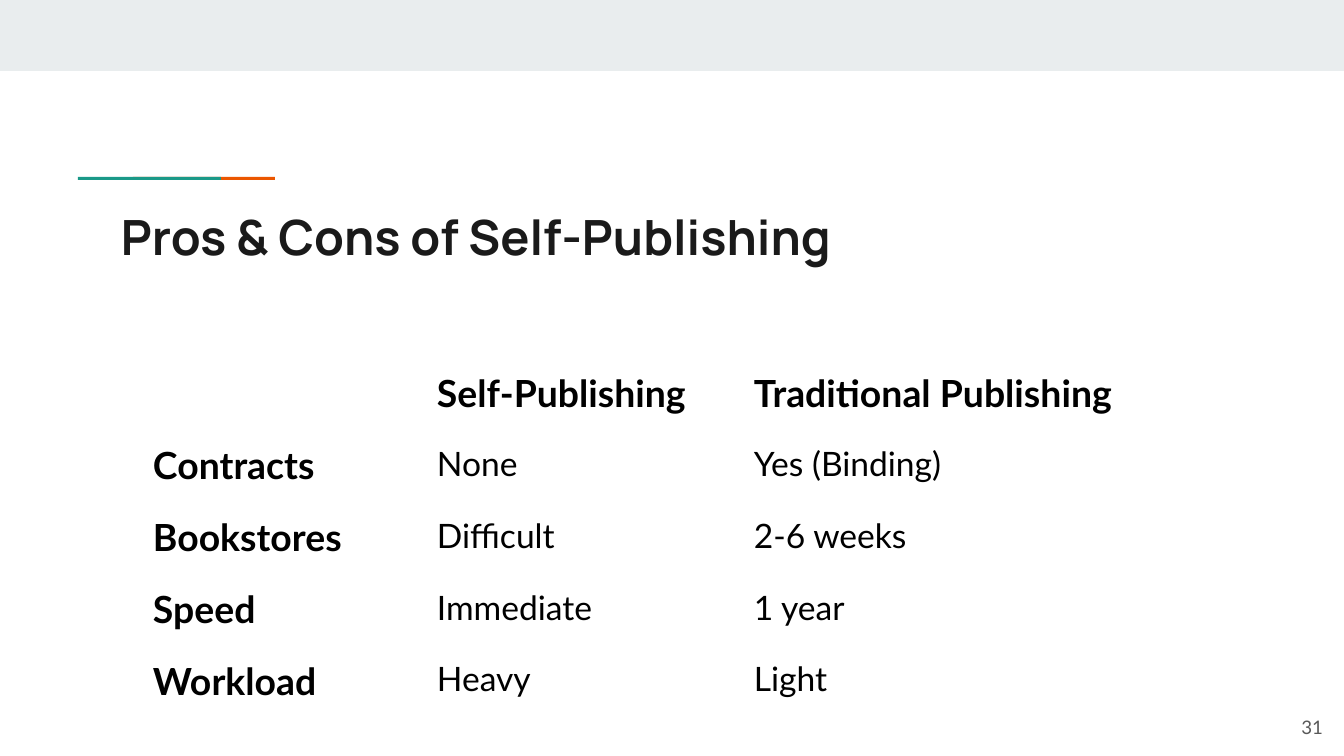
import pptx
import pptx.dml.color
import pptx.enum.shapes
import pptx.enum.text
import pptx.util

EMU_PER_PX = 914400 / 134.4
INSET = 13
ROW_HEIGHT = 72
THEME = {
    "band": "E9EDEE",
    "orange": "EB5600",
    "teal": "1A9988",
    "title": {"font": "Manrope", "size": 26, "bold": True, "color": "1A1A1A"},
    "heading": {"font": "Lato", "size": 20, "bold": True, "color": "000000"},
    "value": {"font": "Lato", "size": 18, "bold": False, "color": "000000"},
    "page_number": {"font": "Lato", "size": 10, "bold": False, "color": "595959"},
}


def px(length):
    return pptx.util.Emu(round(length * EMU_PER_PX))


def write(frame, inset_owner, words, role):
    for side in ("left", "top", "right", "bottom"):
        setattr(inset_owner, f"margin_{side}", px(INSET))
    frame.text = words
    style = THEME[role]
    for run in frame.paragraphs[0].runs:
        run.font.name = style["font"]
        run.font.size = pptx.util.Pt(style["size"])
        run.font.bold = style["bold"]
        run.font.color.rgb = pptx.dml.color.RGBColor.from_string(style["color"])


deck = pptx.Presentation()
deck.slide_width, deck.slide_height = px(1344), px(756)
slide = deck.slides.add_slide(deck.slide_layouts[6])

for color, *place in [
    ("band", 0, 0, 1344, 71),
    ("orange", 133, 177, 142, 3),
    ("teal", 78, 177, 143, 3),
]:
    bar = slide.shapes.add_shape(pptx.enum.shapes.MSO_SHAPE.RECTANGLE, *map(px, place))
    bar.shadow.inherit = False
    bar.fill.solid()
    bar.fill.fore_color.rgb = pptx.dml.color.RGBColor.from_string(THEME[color])
    bar.line.fill.background()

left_aligned = pptx.enum.text.PP_ALIGN.LEFT
right_aligned = pptx.enum.text.PP_ALIGN.RIGHT
top = pptx.enum.text.MSO_ANCHOR.TOP
middle = pptx.enum.text.MSO_ANCHOR.MIDDLE
for role, words, alignment, anchor, *place in [
    ("title", "Pros & Cons of Self-Publishing", left_aligned, top, 108, 194, 1130, 79),
    ("page_number", "31", right_aligned, middle, 1255, 698, 81, 58),
]:
    frame = slide.shapes.add_textbox(*map(px, place)).text_frame
    write(frame, frame, words, role)
    frame.word_wrap = True
    frame.vertical_anchor = anchor
    frame.paragraphs[0].alignment = alignment

publishing_routes = [
    ("", "Self-Publishing", "Traditional Publishing"),
    ("Contracts", "None", "Yes (Binding)"),
    ("Bookstores", "Difficult", "2-6 weeks"),
    ("Speed", "Immediate", "1 year"),
    ("Workload", "Heavy", "Light"),
]
column_widths = [284, 317, 464]
comparison = slide.shapes.add_table(
    len(publishing_routes), len(column_widths),
    px(140), px(358), px(sum(column_widths)), px(ROW_HEIGHT * len(publishing_routes)),
).table
comparison.first_row = False
comparison.horz_banding = False
for column, width in zip(comparison.columns, column_widths):
    column.width = px(width)

for row_index, row in enumerate(publishing_routes):
    for column_index, words in enumerate(row):
        cell = comparison.cell(row_index, column_index)
        cell.fill.background()
        is_heading = row_index == 0 or column_index == 0
        write(cell.text_frame, cell, words, "heading" if is_heading else "value")

deck.save("out.pptx")
